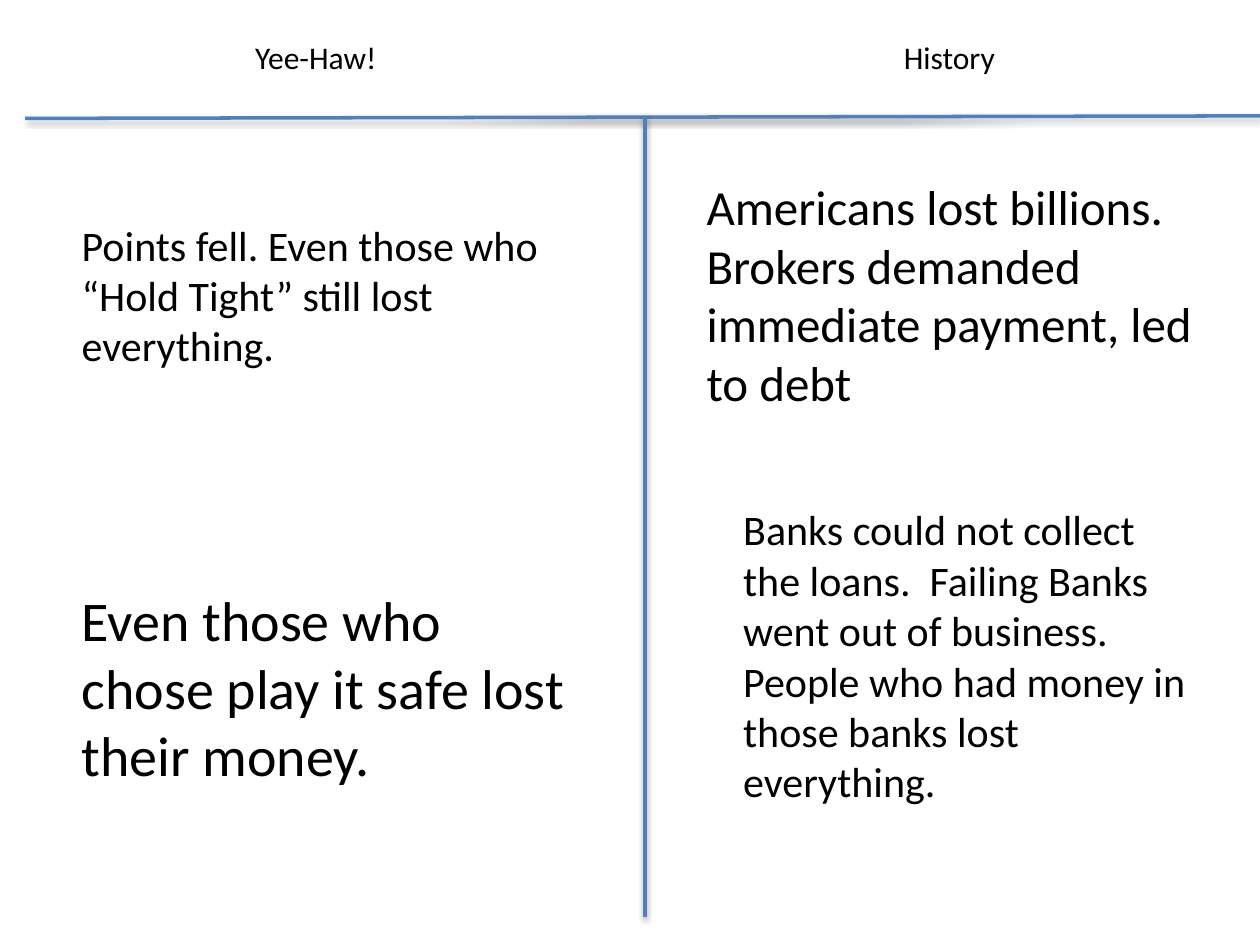
from dataclasses import dataclass

from lxml import etree
from pptx import Presentation
from pptx import util as u
from pptx.dml.color import RGBColor
from pptx.enum import shapes, text
from pptx.oxml import ns


@dataclass(frozen=True)
class Theme:
    font: str = "Calibri"
    ink: str = "000000"
    rule: str = "4F81BD"
    rule_width: float = 2
    heading: int = 18
    body: int = 24
    large: int = 28
    largest: int = 32


class Page:
    def __init__(self, slide, theme):
        self.slide = slide
        self.theme = theme

    def rule(self, x1, y1, x2, y2):
        """Draw a straight line with a soft shadow below it."""
        line = self.slide.shapes.add_connector(
            shapes.MSO_CONNECTOR.STRAIGHT, *map(u.Inches, (x1, y1, x2, y2)))
        line.line.color.rgb = RGBColor.from_string(self.theme.rule)
        line.line.width = u.Pt(self.theme.rule_width)

        effects = etree.SubElement(line._element.spPr, ns.qn("a:effectLst"))
        shadow = etree.SubElement(
            effects, ns.qn("a:outerShdw"), blurRad=str(u.Pt(3.1)),
            dist=str(u.Pt(1.6)), dir="5400000", rotWithShape="0")
        color = etree.SubElement(shadow, ns.qn("a:srgbClr"), val=self.theme.ink)
        etree.SubElement(color, ns.qn("a:alpha"), val="38000")

    def text(self, words, left, top, width, height, size,
             align=text.PP_ALIGN.LEFT):
        """Place one wrapped paragraph."""
        box = self.slide.shapes.add_textbox(
            *map(u.Inches, (left, top, width, height)))
        frame = box.text_frame
        frame.word_wrap = True
        frame.auto_size = text.MSO_AUTO_SIZE.SHAPE_TO_FIT_TEXT
        para = frame.paragraphs[0]
        para.text = words
        para.alignment = align
        para.font.name = self.theme.font
        para.font.size = u.Pt(size)
        para.font.color.rgb = RGBColor.from_string(self.theme.ink)

    def heading(self, words, left):
        self.text(words, left, 0.25, 3.97, 0.4, self.theme.heading,
                  text.PP_ALIGN.CENTER)


def main():
    deck = Presentation()
    deck.slide_width, deck.slide_height = u.Inches(10), u.Inches(7.5)
    theme = Theme()
    page = Page(deck.slides.add_slide(deck.slide_layouts[6]), theme)
    left_column, middle = 0.55, 5.12

    # T-chart lines
    page.rule(0.2, 0.94, 10, 0.92)
    page.rule(middle, 0.92, middle, 7.28)

    # Column headings
    page.heading("History", 5.55)
    page.heading("Yee-Haw! ", left_column)

    # Column notes
    page.text("Americans lost billions.  Brokers demanded immediate payment, "
              "led to debt", 5.51, 1.35, 4.34, 1.99, theme.large)
    page.text("Points fell. Even those who “Hold Tight” still lost everything.",
              left_column, 1.69, 3.97, 1.31, theme.body)
    page.text("Even those who chose play it safe lost their money.",
              left_column, 4.6, 4.14, 1.72, theme.largest)
    page.text("Banks could not collect the loans.  Failing Banks went out of "
              "business.  People who had money in those banks lost everything.",
              5.8, 3.95, 3.72, 2.52, theme.body)

    deck.save("out.pptx")


if __name__ == "__main__":
    main()
